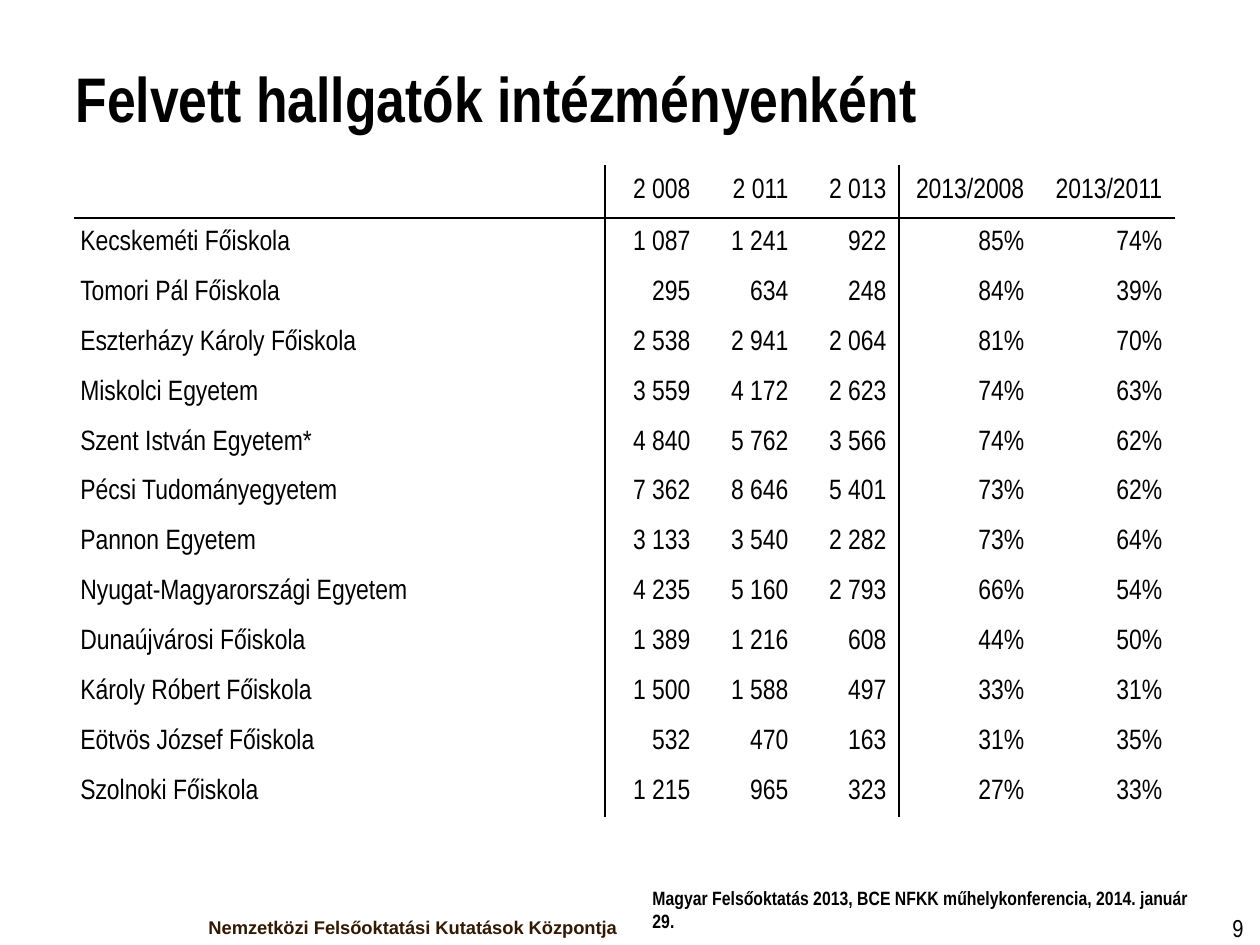
import lxml.etree
import pptx
import pptx.dml.color
import pptx.enum.text
import pptx.oxml.ns
import pptx.util

PX = 914400 / 126
COLORS = {"text": "000000", "footer": "321900"}
NARROW = "Arial Narrow"
ANCHOR = pptx.enum.text.MSO_ANCHOR
ALIGN = pptx.enum.text.PP_ALIGN

HEADERS = ["", "2 008", "2 011", "2 013", "2013/2008", "2013/2011"]
INSTITUTIONS = [
    ["Kecskeméti Főiskola", "1 087", "1 241", "922", "85%", "74%"],
    ["Tomori Pál Főiskola", "295", "634", "248", "84%", "39%"],
    ["Eszterházy Károly Főiskola", "2 538", "2 941", "2 064", "81%", "70%"],
    ["Miskolci Egyetem", "3 559", "4 172", "2 623", "74%", "63%"],
    ["Szent István Egyetem*", "4 840", "5 762", "3 566", "74%", "62%"],
    ["Pécsi Tudományegyetem", "7 362", "8 646", "5 401", "73%", "62%"],
    ["Pannon Egyetem", "3 133", "3 540", "2 282", "73%", "64%"],
    ["Nyugat-Magyarországi Egyetem", "4 235", "5 160", "2 793", "66%", "54%"],
    ["Dunaújvárosi Főiskola", "1 389", "1 216", "608", "44%", "50%"],
    ["Károly Róbert Főiskola", "1 500", "1 588", "497", "33%", "31%"],
    ["Eötvös József Főiskola", "532", "470", "163", "31%", "35%"],
    ["Szolnoki Főiskola", "1 215", "965", "323", "27%", "33%"],
]
COLUMN_WIDTHS = [531, 98, 98, 98, 138, 138]
HEADER_HEIGHT, ROW_HEIGHT = 53, 50
RULED_COLUMNS = (0, 3)  # columns with a vertical rule on their right


def px(length):
    return pptx.util.Emu(round(length * PX))


def format_paragraph(paragraph, size, align=ALIGN.LEFT, font=NARROW, bold=False, color="text"):
    paragraph.alignment = align
    paragraph.font.size = pptx.util.Pt(size)
    paragraph.font.name = font
    paragraph.font.bold = bold
    paragraph.font.color.rgb = pptx.dml.color.RGBColor.from_string(COLORS[color])


def set_borders(cell, ruled_sides):
    """Draw the sides named in ruled_sides (letters of LRTB) and clear the others."""
    properties = cell._tc.get_or_add_tcPr()
    for side in "LRTB":
        line = lxml.etree.SubElement(properties, pptx.oxml.ns.qn(f"a:ln{side}"))
        if side in ruled_sides:
            line.set("w", str(pptx.util.Pt(1.5)))
            fill = lxml.etree.SubElement(line, pptx.oxml.ns.qn("a:solidFill"))
            color = lxml.etree.SubElement(fill, pptx.oxml.ns.qn("a:srgbClr"))
            color.set("val", COLORS["text"])
        else:
            lxml.etree.SubElement(line, pptx.oxml.ns.qn("a:noFill"))


def ruled_sides(row, column):
    sides = {0: "B", 1: "T"}.get(row, "")
    if column in RULED_COLUMNS:
        sides += "R"
    if column - 1 in RULED_COLUMNS:
        sides += "L"
    return sides


def add_title(slide, text, left, top, width, height):
    title = slide.shapes.title
    title.left, title.top, title.width, title.height = map(px, (left, top, width, height))
    frame = title.text_frame
    frame.text = text
    frame.word_wrap = True
    frame.auto_size = pptx.enum.text.MSO_AUTO_SIZE.NONE
    frame.vertical_anchor = ANCHOR.MIDDLE
    frame.margin_left = frame.margin_right = pptx.util.Inches(0.1)
    frame.margin_top = pptx.util.Inches(0.15)
    frame.margin_bottom = pptx.util.Inches(0.05)
    format_paragraph(frame.paragraphs[0], 36, bold=True)


def add_admissions_table(slide, left, top):
    rows = [HEADERS] + INSTITUTIONS
    heights = [HEADER_HEIGHT] + [ROW_HEIGHT] * len(INSTITUTIONS)
    table = slide.shapes.add_table(
        len(rows), len(HEADERS), px(left), px(top), px(sum(COLUMN_WIDTHS)), px(sum(heights))
    ).table
    table.first_row = table.horz_banding = False
    for column, width in zip(table.columns, COLUMN_WIDTHS):
        column.width = px(width)
    for row_index, (values, height) in enumerate(zip(rows, heights)):
        table.rows[row_index].height = px(height)
        for column_index, value in enumerate(values):
            cell = table.cell(row_index, column_index)
            is_name = column_index == 0
            cell.text = value
            cell.vertical_anchor = ANCHOR.MIDDLE
            cell.margin_left = pptx.util.Inches(0.05)
            cell.margin_right = pptx.util.Inches(0.05 if is_name else 0.1)
            cell.margin_top = cell.margin_bottom = 0
            set_borders(cell, ruled_sides(row_index, column_index))
            cell.fill.background()
            format_paragraph(
                cell.text_frame.paragraphs[0], 16, ALIGN.LEFT if is_name else ALIGN.RIGHT
            )


def add_label(slide, text, box, size, anchor=ANCHOR.TOP, **style):
    frame = slide.shapes.add_textbox(*map(px, box)).text_frame
    frame.word_wrap = True
    frame.vertical_anchor = anchor
    frame.text = text
    format_paragraph(frame.paragraphs[0], size, **style)


def add_footer(slide, left, top):
    add_label(slide, "Nemzetközi Felsőoktatási Kutatások Központja", (left, top + 30, 456, 35),
              10.5, align=ALIGN.RIGHT, font="Arial", bold=True, color="footer")
    add_label(slide, "Magyar Felsőoktatás 2013, BCE NFKK műhelykonferencia, 2014. január 29.",
              (left + 466, top, 586, 37), 11, bold=True)
    add_label(slide, "9", (left + 1002, top + 30, 80, 35), 14, ANCHOR.MIDDLE, align=ALIGN.RIGHT)


def main():
    presentation = pptx.Presentation()
    presentation.slide_width, presentation.slide_height = px(1260), px(945)
    slide = presentation.slides.add_slide(presentation.slide_layouts[5])
    add_title(slide, "Felvett hallgatók intézményenként", 63, 38, 1143, 107)
    add_admissions_table(slide, 74, 165)
    add_footer(slide, 174, 880)
    presentation.save("out.pptx")


if __name__ == "__main__":
    main()
